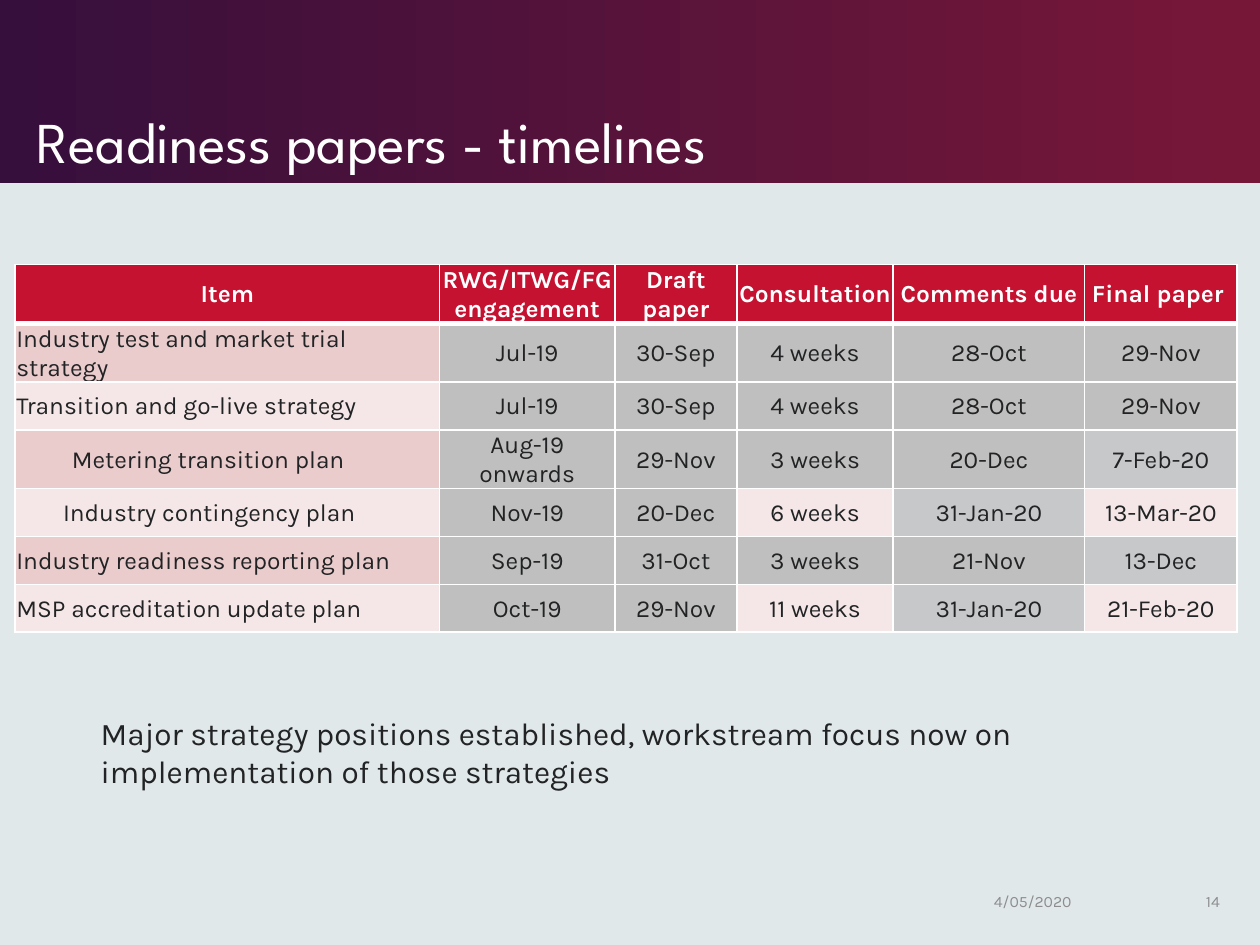
import pptx
import pptx.util
import pptx.dml.color
import pptx.enum.shapes
import pptx.enum.text
import pptx.oxml
import pptx.oxml.ns

Inches = pptx.util.Inches
Pt = pptx.util.Pt
RGBColor = pptx.dml.color.RGBColor
ALIGN = pptx.enum.text.PP_ALIGN
ANCHOR = pptx.enum.text.MSO_ANCHOR

PALE = RGBColor(0xE0, 0xE8, 0xEA)
PLUM = RGBColor(0x36, 0x0F, 0x3C)
WINE = RGBColor(0x77, 0x17, 0x38)
RED = RGBColor(0xC4, 0x12, 0x30)
ROSE = RGBColor(0xEA, 0xCC, 0xCD)
BLUSH = RGBColor(0xF5, 0xE7, 0xE8)
GREY = RGBColor(0xBF, 0xBF, 0xBF)
SILVER = RGBColor(0xC6, 0xC8, 0xCA)
WHITE = RGBColor(0xFF, 0xFF, 0xFF)
INK = RGBColor(0x22, 0x23, 0x24)
FADED = RGBColor(0x8D, 0x8D, 0x8E)

SHADES = {"g": GREY, "s": SILVER, "b": BLUSH}
WIDTHS = [3.37, 1.39, 0.97, 1.24, 1.52, 1.21]
HEIGHTS = [0.47, 0.38, 0.38, 0.45, 0.38, 0.38, 0.38]
HEADS = ["Item", "RWG/ITWG/FG engagement", "Draft paper",
         "Consultation", "Comments due", "Final paper\u00a0"]
PLANS = [
    ("Industry test and market trial strategy", 0, "ggggg",
     ["Jul-19", "30-Sep", "4 weeks", "28-Oct", "29-Nov"]),
    ("Transition and go-live strategy", 0, "ggggg",
     ["Jul-19", "30-Sep", "4 weeks", "28-Oct", "29-Nov"]),
    ("Metering transition plan", 0.44, "ggggs",
     ["Aug-19 onwards", "29-Nov", "3 weeks", "20-Dec", "7-Feb-20"]),
    ("Industry contingency plan", 0.37, "ggbsb",
     ["Nov-19", "20-Dec", "6 weeks", "31-Jan-20", "13-Mar-20"]),
    ("Industry readiness reporting plan", 0, "ggggs",
     ["Sep-19", "31-Oct", "3 weeks", "21-Nov", "13-Dec"]),
    ("MSP accreditation update plan", 0, "ggbsb",
     ["Oct-19", "29-Nov", "11 weeks", "31-Jan-20", "21-Feb-20"]),
]


def write(frame, text, size=14, color=INK, face="Karla", bold=False,
          align=ALIGN.LEFT, space=None, indent=0):
    """Fill a text frame with one formatted paragraph."""
    frame.word_wrap = True
    par = frame.paragraphs[0]
    par.alignment = align
    par.line_spacing = space
    if indent:
        par._p.get_or_add_pPr().set("marL", str(Inches(indent)))
    run = par.add_run()
    run.text = text
    run.font.size = Pt(size)
    run.font.name = face
    run.font.bold = bold
    run.font.color.rgb = color


def add_note(slide, box, text, anchor=ANCHOR.TOP, **style):
    """Place a text box in the given box."""
    frame = slide.shapes.add_textbox(*map(Inches, box)).text_frame
    frame.vertical_anchor = anchor
    write(frame, text, **style)


def add_header(slide, box):
    """Place the gradient band and the title on it."""
    left, top, width, height = box
    band = slide.shapes.add_shape(
        pptx.enum.shapes.MSO_SHAPE.RECTANGLE, *map(Inches, box))
    band.shadow.inherit = False
    band.line.fill.background()
    band.fill.gradient()
    band.fill.gradient_angle = 0
    for stop, place, color in zip(band.fill.gradient_stops, (0, 0.99), (PLUM, WINE)):
        stop.position = place
        stop.color.rgb = color
    slide.shapes._spTree.insert(2, band._element)

    title = slide.shapes.title
    title.left, title.top = Inches(left + 0.19), Inches(top + 0.15)
    title.width, title.height = Inches(7.38), Inches(height - 0.15)
    title.text_frame.vertical_anchor = ANCHOR.BOTTOM
    write(title.text_frame, "Readiness papers - timelines", size=33,
          color=WHITE, face="League Spartan", space=0.9)


def edge(cell, side, width):
    """Draw one white border of a cell."""
    cell._tc.get_or_add_tcPr().append(pptx.oxml.parse_xml(
        f'<a:{side} {pptx.oxml.ns.nsdecls("a")} w="{Pt(width)}"><a:solidFill>'
        f'<a:srgbClr val="{WHITE}"/></a:solidFill></a:{side}>'))


def set_cell(grid, row, col, text, fill, **style):
    """Format and fill one table cell."""
    cell = grid.cell(row, col)
    cell.margin_left = cell.margin_right = cell.margin_top = Inches(0.01)
    cell.margin_bottom = 0
    cell.vertical_anchor = ANCHOR.MIDDLE
    for side in ("lnL", "lnR", "lnT", "lnB"):
        thick = (row, side) in ((0, "lnB"), (1, "lnT"))
        edge(cell, side, 3 if thick else 1)
    cell.fill.solid()
    cell.fill.fore_color.rgb = fill
    write(cell.text_frame, text, **style)


def add_grid(slide, box):
    """Place the table of paper dates."""
    grid = slide.shapes.add_table(
        len(HEIGHTS), len(WIDTHS), *map(Inches, box)).table
    grid.horz_banding = False
    for col, width in zip(grid.columns, WIDTHS):
        col.width = Inches(width)
    for row, height in zip(grid.rows, HEIGHTS):
        row.height = Inches(height)
    for col, head in enumerate(HEADS):
        set_cell(grid, 0, col, head, RED, color=WHITE, bold=True, align=ALIGN.CENTER)
    for row, (item, indent, codes, dates) in enumerate(PLANS, 1):
        set_cell(grid, row, 0, item, ROSE if row % 2 else BLUSH, indent=indent)
        for col, (code, date) in enumerate(zip(codes, dates), 1):
            set_cell(grid, row, col, date, SHADES[code], align=ALIGN.CENTER)


def add_footer(slide, box):
    """Place the date and page number at the ends of the box."""
    left, top, width, height = box
    style = dict(anchor=ANCHOR.MIDDLE, size=9, color=FADED)
    add_note(slide, (left, top, 1.42, height), "4/05/2020", **style)
    add_note(slide, (left + width - 0.47, top, 0.47, height), "14",
             align=ALIGN.RIGHT, **style)


def main():
    """Build and save the slide."""
    deck = pptx.Presentation()
    deck.slide_width, deck.slide_height = Inches(10), Inches(7.5)
    slide = deck.slides.add_slide(deck.slide_layouts[5])
    slide.background.fill.solid()
    slide.background.fill.fore_color.rgb = PALE
    add_header(slide, (0, 0, 10, 1.45))
    add_grid(slide, (0.12, 2.1, 9.7, 2.85))
    add_note(slide, (0.7, 5.62, 8.72, 0.71),
             "Major strategy positions established, workstream focus now on "
             "implementation of those strategies", size=18)
    add_footer(slide, (7.79, 6.95, 1.99, 0.4))
    deck.save("out.pptx")


if __name__ == "__main__":
    main()
